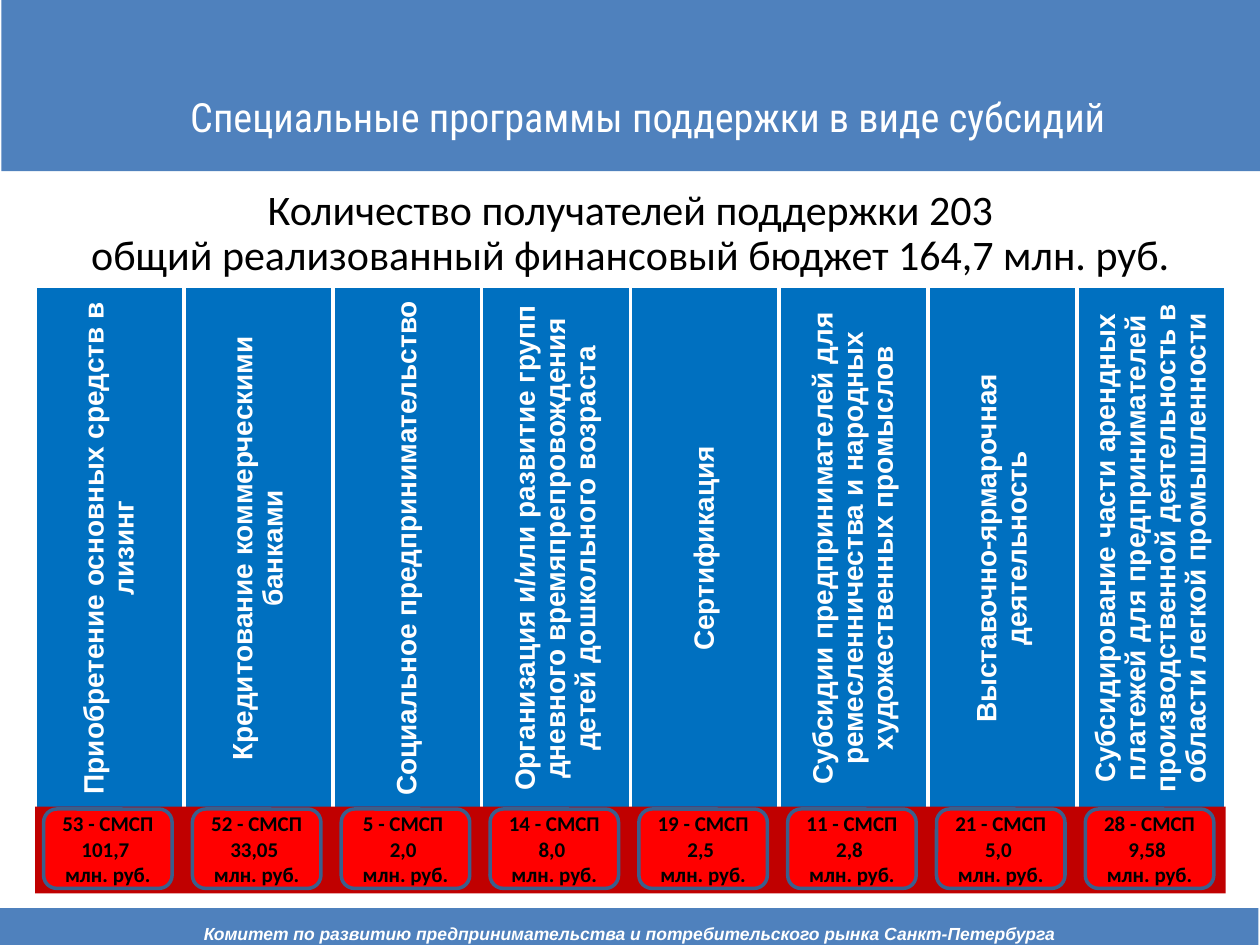
from dataclasses import dataclass

from pptx import Presentation
from pptx.dml.color import RGBColor
from pptx.enum.shapes import MSO_SHAPE
from pptx.enum.text import MSO_ANCHOR, PP_ALIGN
from pptx.oxml.ns import qn
from pptx.shapes.autoshape import Shape
from pptx.slide import Slide
from pptx.util import Cm, Pt

COLORS = {
    "band": "4F81BD",
    "column": "0070C0",
    "strip": "C00000",
    "badge": "FF0000",
    "badge_line": "3A5F8C",
    "white": "FFFFFF",
    "black": "000000",
}
LEFT, PITCH, TOTAL_WIDTH = 0.71, 3, 24


@dataclass
class Box:
    left: float
    top: float
    width: float
    height: float


@dataclass
class TextStyle:
    font: str
    size: float
    color: str
    bold: bool = False
    italic: bool = False
    spacing: float = 1.0


@dataclass
class Program:
    name: str
    results: list[str]


TITLE = TextStyle("Roboto Condensed", 23, "white")
SUMMARY = TextStyle("Calibri", 24, "black", spacing=0.9)
COLUMN = TextStyle("Arial", 16, "white", bold=True, spacing=0.9)
BADGE = TextStyle("Calibri", 12, "black", bold=True)
FOOTER = TextStyle("Arial", 10, "white", bold=True, italic=True)

PROGRAMS = [
    Program("Приобретение основных средств в лизинг", ["53 - СМСП 101,7 "]),
    Program("Кредитование коммерческими банками", ["52 - СМСП 33,05 "]),
    Program("Социальное предпринимательство", ["5 - СМСП ", "2,0 "]),
    Program("Организация и/или развитие групп дневного времяпрепровождения "
            "детей дошкольного возраста", ["14 - СМСП 8,0 "]),
    Program("Сертификация", ["19 - СМСП 2,5 "]),
    Program("Субсидии предпринимателей для ремесленничества и народных "
            "художественных промыслов", ["11 - СМСП 2,8 "]),
    Program("Выставочно-ярмарочная деятельность", ["21 - СМСП 5,0 "]),
    Program("Субсидирование части арендных платежей для предпринимателей "
            "производственной деятельность в области легкой промышленности",
            ["28 - СМСП 9,58 "]),
]


def rgb(name: str) -> RGBColor:
    """Return the named colour."""
    return RGBColor.from_string(COLORS[name])


def draw_box(slide: Slide, box: Box, fill: str, line: str | None = None,
             line_width: float = 2, kind: MSO_SHAPE = MSO_SHAPE.RECTANGLE) -> Shape:
    """Draw a filled shape, outlined if a line colour is given."""
    shape = slide.shapes.add_shape(
        kind, Cm(box.left), Cm(box.top), Cm(box.width), Cm(box.height))
    shape.shadow.inherit = False
    shape.fill.solid()
    shape.fill.fore_color.rgb = rgb(fill)
    if line:
        shape.line.color.rgb = rgb(line)
        shape.line.width = Pt(line_width)
    else:
        shape.line.fill.background()
    return shape


def write(shape: Shape, paragraphs: list[str], style: TextStyle,
          margin: float | None = None) -> None:
    """Fill a shape with centred paragraphs in one style."""
    frame = shape.text_frame
    frame.word_wrap = True
    frame.vertical_anchor = MSO_ANCHOR.MIDDLE
    if margin is not None:
        frame.margin_left = frame.margin_right = Cm(margin)
        frame.margin_top = frame.margin_bottom = Cm(margin)
    frame.text = "\n".join(paragraphs)
    for paragraph in frame.paragraphs:
        paragraph.alignment = PP_ALIGN.CENTER
        paragraph.line_spacing = style.spacing
        paragraph.font.name = style.font
        paragraph.font.size = Pt(style.size)
        paragraph.font.bold = style.bold
        paragraph.font.italic = style.italic
        paragraph.font.color.rgb = rgb(style.color)


def draw_column(slide: Slide, index: int, program: Program) -> None:
    """Draw a programme column with its name reading upwards."""
    column = draw_box(slide, Box(LEFT + index * PITCH, 5.77, PITCH, 10.57),
                      "column", "white")
    write(column, [program.name], COLUMN, margin=0.18)
    column.element.txBody.find(qn("a:bodyPr")).set("vert", "vert270")


def draw_badge(slide: Slide, index: int, program: Program) -> None:
    """Draw the badge with the results of a programme."""
    badge = draw_box(slide, Box(LEFT + 0.17 + index * PITCH, 16.31, 2.59, 1.6),
                     "badge", "badge_line", kind=MSO_SHAPE.ROUNDED_RECTANGLE)
    write(badge, [*program.results, "млн. руб."], BADGE)


def main() -> None:
    """Build the slide and save it."""
    presentation = Presentation()
    presentation.slide_width, presentation.slide_height = Cm(25.4), Cm(19.05)
    slide = presentation.slides.add_slide(presentation.slide_layouts[6])

    draw_box(slide, Box(0.03, -0.08, 25.37, 3.53), "band")
    footer = draw_box(slide, Box(0, 18.31, 25.37, 1.02), "band")
    write(footer, ["Комитет по развитию предпринимательства и "
                   "потребительского рынка Санкт-Петербурга"], FOOTER)

    title = slide.shapes.add_textbox(Cm(1.65), Cm(1.73), Cm(22.86), Cm(1.22))
    write(title, ["Специальные программы поддержки в виде субсидий"], TITLE)

    summary = draw_box(slide, Box(LEFT, 3.53, TOTAL_WIDTH, 2.39),
                       "white", "white", 0.75)
    write(summary, ["Количество получателей поддержки 203\v"
                    "общий реализованный финансовый бюджет 164,7 млн. руб."],
          SUMMARY, margin=0.25)

    for index, program in enumerate(PROGRAMS):
        draw_column(slide, index, program)
    draw_box(slide, Box(LEFT, 16.26, TOTAL_WIDTH, 1.75), "strip")
    for index, program in enumerate(PROGRAMS):
        draw_badge(slide, index, program)

    presentation.save("out.pptx")


if __name__ == "__main__":
    main()
